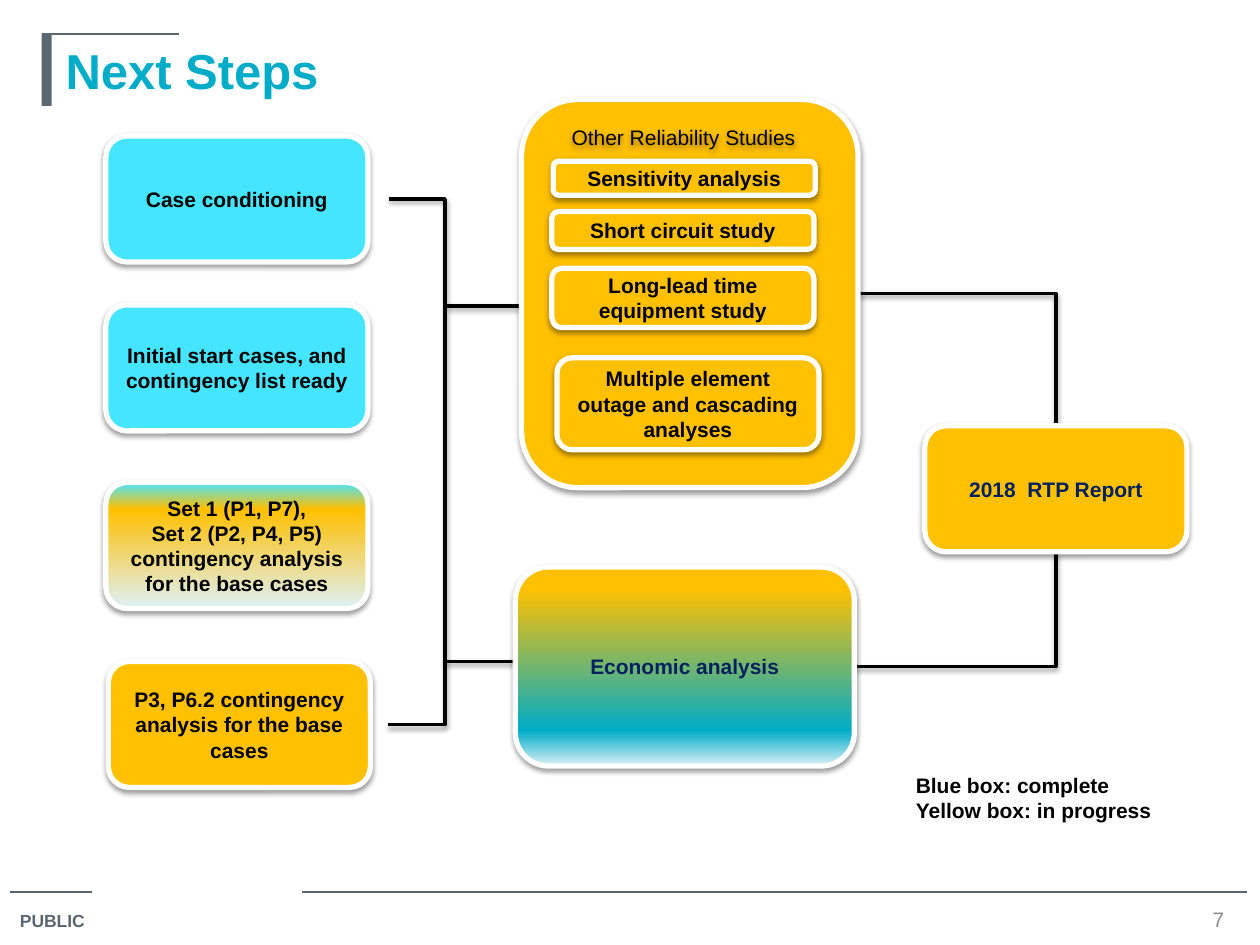
from copy import deepcopy
from dataclasses import dataclass

from lxml.etree import SubElement
from pptx import Presentation
from pptx.dml.color import RGBColor
from pptx.enum.shapes import MSO_CONNECTOR as Connector, MSO_SHAPE as Preset
from pptx.enum.text import MSO_ANCHOR as Anchor, MSO_AUTO_SIZE as AutoSize, PP_ALIGN as Align
from pptx.oxml.ns import qn
from pptx.util import Emu, Pt

EMU_PER_PX = 9144
BLACK, WHITE, GREY, NAVY = "000000", "FFFFFF", "5B6770", "002060"
BLUE, YELLOW, TEAL, PALE = "45E5FF", "FFC000", "00ACC8", "DEF1F8"
TOP, BOTTOM, RIGHT = 0, 2, 3


@dataclass(frozen=True)
class Box:
    """A rounded box; fill is a colour or (percent, colour) stops from top to bottom."""
    key: str
    text: str
    area: tuple[int, int, int, int]
    fill: str | tuple = YELLOW
    color: str = BLACK


@dataclass(frozen=True)
class Line:
    """A line between two points."""
    begin: tuple[int, int]
    end: tuple[int, int]
    color: str = BLACK
    width: float = 2
    shadow: bool = True


RULES = [
    Line((8, 708), (73, 708), GREY, 0.75, False),
    Line((240, 708), (990, 708), GREY, 0.75, False),
    Line((33, 27), (142, 27), GREY, 0.75, False),
]
BRANCHES = [Line((411, 525), (353, 525)), Line((414, 243), (355, 243))]
BRACKET = Line((309, 158), (308, 575))
BRACKET_X = 354
REPORT_LINKS = [
    (Line((681, 233), (838, 338)), "studies", TOP),
    (Line((678, 529), (838, 438)), "economic", BOTTOM),
]
BOXES = [
    Box("conditioning", "Case conditioning", (84, 108, 208, 100), BLUE),
    Box("start cases", "Initial start cases, and contingency list ready", (84, 242, 208, 100), BLUE),
    Box("sets", "Set 1 (P1, P7),\nSet 2 (P2, P4, P5) contingency analysis for the base cases",
        (84, 383, 208, 100), ((0, BLUE), (21, YELLOW), (100, PALE))),
    Box("contingency", "P3, P6.2 contingency analysis for the base cases", (86, 525, 208, 100)),
    Box("studies", "", (414, 79, 267, 308)),
    Box("economic", "Economic analysis", (409, 450, 269, 158),
        ((11, YELLOW), (82, TEAL), (100, PALE)), NAVY),
    Box("report", "2018  RTP Report", (734, 338, 208, 100), color=NAVY),
    Box("short circuit", "Short circuit study", (438, 168, 208, 30)),
    Box("long-lead", "Long-lead time equipment study", (438, 213, 208, 47)),
    Box("sensitivity", "Sensitivity analysis", (439, 128, 208, 27)),
    Box("cascading", "Multiple element outage and cascading analyses", (442, 284, 208, 73)),
]


def px(*values: int) -> list[Emu]:
    """Turn px lengths into EMU."""
    return [Emu(value * EMU_PER_PX) for value in values]


def rgb(value: str) -> RGBColor:
    """Turn a hex string into a colour."""
    return RGBColor.from_string(value)


def add_shadow(properties) -> None:
    """Give shape properties a soft shadow straight below."""
    effects = properties.find(qn("a:effectLst"))
    if effects is None:
        effects = SubElement(properties, qn("a:effectLst"))
    shadow = SubElement(effects, qn("a:outerShdw"), blurRad=str(Pt(3.1)), dist=str(Pt(1.6)),
                        dir="5400000", rotWithShape="0")
    color = SubElement(shadow, qn("a:srgbClr"), val=BLACK)
    SubElement(color, qn("a:alpha"), val="38000")


def write_text(shape, text: str, *, size: float = 12, color: str = BLACK, bold: bool = True,
               align=Align.LEFT, anchor=Anchor.TOP) -> None:
    """Fill a shape with text, one paragraph a line."""
    frame = shape.text_frame
    frame.text = text
    frame.word_wrap = True
    frame.auto_size = AutoSize.NONE
    frame.vertical_anchor = anchor
    for paragraph in frame.paragraphs:
        paragraph.alignment = align
        for run in paragraph.runs:
            run.font.name = "Arial"
            run.font.size = Pt(size)
            run.font.bold = bold
            run.font.color.rgb = rgb(color)


def add_label(slide, text: str, area: tuple[int, int, int, int], **style):
    """Add a text box."""
    label = slide.shapes.add_textbox(*px(*area))
    write_text(label, text, **style)
    return label


def fill_gradient(shape, stops: tuple) -> None:
    """Fill a shape with colour stops from top to bottom."""
    shape.fill.gradient()
    shape.fill.gradient_angle = 270
    elements = shape._element.spPr.find(".//" + qn("a:gsLst"))
    for _ in range(len(stops) - len(elements)):
        elements.append(deepcopy(elements[0]))
    for stop, (percent, color) in zip(shape.fill.gradient_stops, stops):
        stop.position = percent / 100
        stop.color.rgb = rgb(color)


def add_box(slide, box: Box):
    """Draw a rounded box with its text and shadow."""
    shape = slide.shapes.add_shape(Preset.ROUNDED_RECTANGLE, *px(*box.area))
    shape.shadow.inherit = False
    if isinstance(box.fill, str):
        shape.fill.solid()
        shape.fill.fore_color.rgb = rgb(box.fill)
    else:
        fill_gradient(shape, box.fill)
    shape.line.color.rgb = rgb(WHITE)
    shape.line.width = Pt(3)
    add_shadow(shape._element.spPr)
    if box.text:
        write_text(shape, box.text, color=box.color, align=Align.CENTER, anchor=Anchor.MIDDLE)
    return shape


def add_line(slide, line: Line, kind=Connector.STRAIGHT):
    """Draw a connector."""
    connector = slide.shapes.add_connector(kind, *px(*line.begin, *line.end))
    connector.line.color.rgb = rgb(line.color)
    connector.line.width = Pt(line.width)
    properties = connector._element.spPr
    SubElement(properties, qn("a:effectLst"))
    if line.shadow:
        add_shadow(properties)
    return connector


def add_corner(slide, line: Line):
    """Draw a connector that runs across, then turns once."""
    connector = add_line(slide, line, Connector.ELBOW)
    connector._element.spPr.find(qn("a:prstGeom")).set("prst", "bentConnector2")
    return connector


def add_bracket(slide, line: Line, middle: int) -> None:
    """Draw a connector whose middle part stands at a given x."""
    geometry = add_line(slide, line, Connector.ELBOW)._element.spPr.find(qn("a:prstGeom"))
    share = (middle - line.begin[0]) * 100000 // (line.end[0] - line.begin[0])
    SubElement(geometry.get_or_add_avLst(), qn("a:gd"), name="adj1", fmla=f"val {share}")


def main() -> None:
    """Build the slide."""
    presentation = Presentation()
    presentation.slide_width, presentation.slide_height = px(1000, 750)
    slide = presentation.slides.add_slide(presentation.slide_layouts[5])

    title = slide.shapes.title
    title.left, title.top, title.width, title.height = px(42, 27, 925, 125)
    write_text(title, "Next Steps", size=28, color=TEAL)
    bar = slide.shapes.add_shape(Preset.RECTANGLE, *px(33, 27, 8, 57))
    bar.shadow.inherit = False
    bar.fill.solid()
    bar.fill.fore_color.rgb = rgb(GREY)
    bar.line.fill.background()
    add_label(slide, "PUBLIC", (6, 717, 77, 28), size=10, color=GREY)
    add_label(slide, "7", (942, 718, 50, 23), color="8C8C8C", bold=False,
              align=Align.CENTER, anchor=Anchor.MIDDLE)

    for line in RULES + BRANCHES:
        add_line(slide, line)
    add_bracket(slide, BRACKET, BRACKET_X)
    links = [(add_corner(slide, line), source, side) for line, source, side in REPORT_LINKS]
    boxes = {box.key: add_box(slide, box) for box in BOXES}
    for connector, source, side in links:
        connector.begin_connect(boxes[source], RIGHT)
        connector.end_connect(boxes["report"], side)
    heading = add_label(slide, "Other Reliability Studies", (423, 85, 239, 47), bold=False,
                        align=Align.CENTER, anchor=Anchor.MIDDLE)
    add_shadow(heading._element.spPr)
    add_label(slide, "Blue box: complete\nYellow box: in progress", (717, 608, 227, 50))
    presentation.save("out.pptx")


if __name__ == "__main__":
    main()
